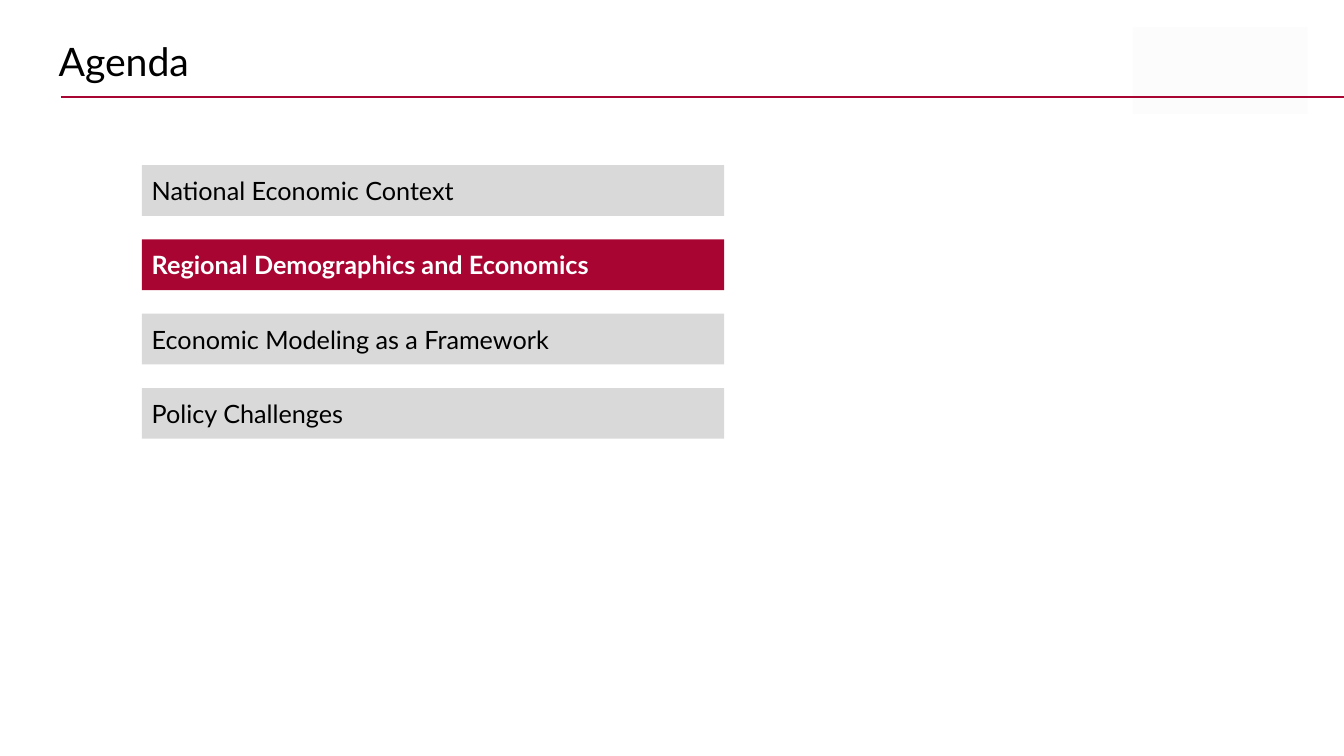
from dataclasses import dataclass

from lxml.etree import SubElement
from pptx import Presentation
from pptx.dml.color import RGBColor
from pptx.enum.shapes import MSO_CONNECTOR, MSO_SHAPE
from pptx.enum.text import MSO_ANCHOR, MSO_AUTO_SIZE, PP_ALIGN
from pptx.oxml.ns import qn
from pptx.shapes.autoshape import Shape
from pptx.slide import Slide
from pptx.text.text import TextFrame
from pptx.util import Pt

FONT = "Lato"
CRIMSON, GREY, PALE = "A80532", "D9D9D9", "FCFCFC"
BLACK, WHITE = "000000", "FFFFFF"
PAGE_WIDTH, PAGE_HEIGHT = 960, 540
ITEM_LEFT, ITEM_TOP, ITEM_WIDTH, ITEM_HEIGHT = 101.3, 118, 416, 36.2
ITEM_STEP = 53.05


@dataclass
class AgendaItem:
    text: str
    current: bool = False


AGENDA = [
    AgendaItem("National Economic Context"),
    AgendaItem("Regional Demographics and Economics", current=True),
    AgendaItem("Economic Modeling as a Framework"),
    AgendaItem("Policy Challenges"),
]


def color(value: str) -> RGBColor:
    return RGBColor.from_string(value)


def write_text(frame: TextFrame, text: str, size: float, ink: str, bold: bool = False) -> None:
    frame.word_wrap = True
    paragraph = frame.paragraphs[0]
    paragraph.text = text
    paragraph.alignment = PP_ALIGN.LEFT
    paragraph.font.name = FONT
    paragraph.font.size = Pt(size)
    paragraph.font.bold = bold
    paragraph.font.color.rgb = color(ink)


def add_box(page: Slide, left: float, top: float, width: float, height: float, fill: str) -> Shape:
    box = page.shapes.add_shape(
        MSO_SHAPE.RECTANGLE, Pt(left), Pt(top), Pt(width), Pt(height)
    )
    box.shadow.inherit = False
    box.fill.solid()
    box.fill.fore_color.rgb = color(fill)
    box.line.fill.background()
    return box


def add_rule(page: Slide, left: float, right: float, top: float) -> None:
    rule = page.shapes.add_connector(
        MSO_CONNECTOR.STRAIGHT, Pt(left), Pt(top), Pt(right), Pt(top)
    )
    rule.line.color.rgb = color(CRIMSON)
    rule.line.width = Pt(1.5)
    SubElement(rule._element.spPr, qn("a:effectLst"))


def add_title(page: Slide, text: str) -> None:
    title = page.shapes.title
    title.left, title.top = Pt(34.6), Pt(23)
    title.width, title.height = Pt(733), Pt(41)
    title.text_frame.vertical_anchor = MSO_ANCHOR.TOP
    title.text_frame.auto_size = MSO_AUTO_SIZE.SHAPE_TO_FIT_TEXT
    write_text(title.text_frame, text, 28, BLACK)


def add_agenda_item(page: Slide, item: AgendaItem, row: int) -> None:
    top = ITEM_TOP + row * ITEM_STEP
    fill = CRIMSON if item.current else GREY
    box = add_box(page, ITEM_LEFT, top, ITEM_WIDTH, ITEM_HEIGHT, fill)
    box.text_frame.vertical_anchor = MSO_ANCHOR.MIDDLE
    write_text(box.text_frame, item.text, 18, WHITE if item.current else BLACK, item.current)


def main() -> None:
    deck = Presentation()
    deck.slide_width, deck.slide_height = Pt(PAGE_WIDTH), Pt(PAGE_HEIGHT)
    page = deck.slides.add_slide(deck.slide_layouts[5])

    # Header: title, pale corner block and rule
    add_title(page, "Agenda")
    add_box(page, 809.3, 19.4, 124.6, 62, PALE)
    add_rule(page, 43.4, PAGE_WIDTH, 69.3)

    # Agenda, with the current section highlighted
    for row, item in enumerate(AGENDA):
        add_agenda_item(page, item, row)

    deck.save("out.pptx")


if __name__ == "__main__":
    main()
